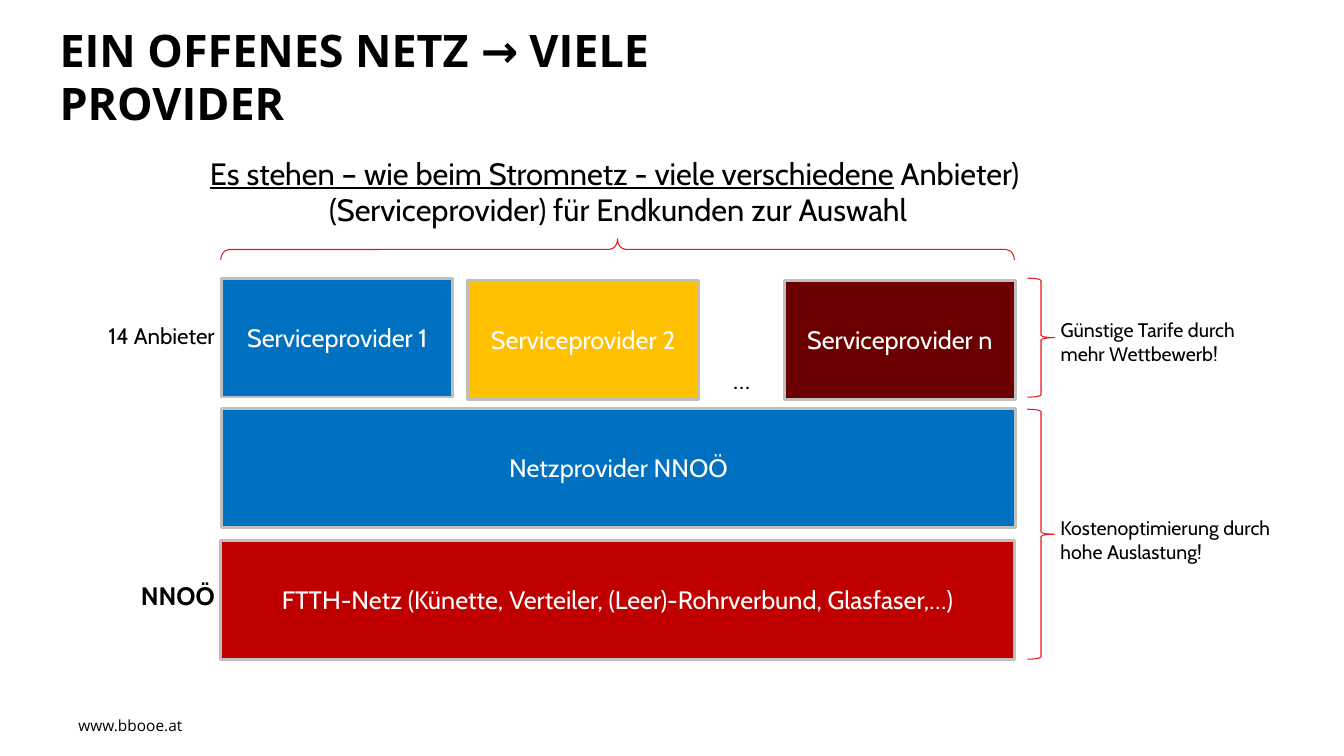
from pptx import Presentation
from pptx.dml.color import RGBColor
from pptx.enum.shapes import MSO_SHAPE as Kind
from pptx.enum.text import MSO_ANCHOR as Anchor, MSO_AUTO_SIZE as Fit, PP_ALIGN as Align
from pptx.util import Inches, Pt

BLACK = RGBColor(0x00, 0x00, 0x00)
WHITE = RGBColor(0xFF, 0xFF, 0xFF)
GREY = RGBColor(0xBF, 0xBF, 0xBF)
BLUE = RGBColor(0x00, 0x70, 0xC0)
GOLD = RGBColor(0xFF, 0xC0, 0x00)
RED = RGBColor(0xC0, 0x00, 0x00)
WINE = RGBColor(0x6C, 0x00, 0x00)
BRIGHT = RGBColor(0xE5, 0x1A, 0x1A)


class Sheet:
    body = "Cabin"
    head = "Open Sans"

    def __init__(self, deck):
        self.slide = deck.slides.add_slide(deck.slide_layouts[5])

    def place(self, shape, spot):
        shape.left, shape.top, shape.width, shape.height = map(Inches, spot)

    def letter(self, shape, text, size, color=BLACK, font=body, bold=False,
               align=Align.LEFT, anchor=Anchor.TOP, wrap=True, inset=None, lead=None):
        frame = shape.text_frame
        frame.text = text
        frame.auto_size = Fit.NONE
        frame.word_wrap = wrap
        frame.vertical_anchor = anchor
        if inset is not None:
            frame.margin_left = frame.margin_right = Inches(inset)
            frame.margin_top = frame.margin_bottom = Inches(inset)
        for para in frame.paragraphs:
            para.alignment = align
            if lead:
                para.line_spacing = Pt(lead)
            for run in para.runs:
                run.font.name = font
                run.font.size = Pt(size)
                run.font.bold = bold
                run.font.color.rgb = color
        return frame

    def title(self, spot, text):
        shape = self.slide.shapes.title
        self.place(shape, spot)
        self.letter(shape, text, 32, font=self.head, bold=True,
                    anchor=Anchor.MIDDLE, wrap=False, lead=38)

    def label(self, spot, text, size, **style):
        shape = self.slide.shapes.add_textbox(*map(Inches, spot))
        return self.letter(shape, text, size, **style)

    def shape(self, kind, spot, line, width):
        shape = self.slide.shapes.add_shape(kind, *map(Inches, spot))
        shape.shadow.inherit = False
        shape.line.color.rgb = line
        shape.line.width = Pt(width)
        return shape

    def block(self, spot, text, fill):
        shape = self.shape(Kind.RECTANGLE, spot, GREY, 2)
        shape.fill.solid()
        shape.fill.fore_color.rgb = fill
        self.letter(shape, text, 18, color=WHITE, align=Align.CENTER, anchor=Anchor.MIDDLE)

    def brace(self, kind, spot, turn=0):
        shape = self.shape(kind, spot, BRIGHT, 0.75)
        shape.fill.background()
        shape.rotation = turn
        return shape


def main():
    deck = Presentation()
    deck.slide_width, deck.slide_height = Inches(13.33), Inches(7.5)
    sheet = Sheet(deck)
    sheet.title((0.49, 0.36, 8.15, 0.8), "EIN OFFENES NETZ → VIELE PROVIDER")
    sheet.label((0.68, 6.74, 1.65, 0.62), "www.bbooe.at", 11,
                font=sheet.head, anchor=Anchor.MIDDLE, lead=34)

    full, part, tall = 7.87, 2.29, 1.18
    blocks = [
        (2.19, 5.36, full, "FTTH-Netz (Künette, Verteiler, (Leer)-Rohrverbund, Glasfaser,…)", RED),
        (2.2, 4.05, full, "Netzprovider NNOÖ", BLUE),
        (2.2, 2.76, part, "Serviceprovider 1", BLUE),
        (4.64, 2.78, part, "Serviceprovider 2", GOLD),
        (7.78, 2.78, part, "Serviceprovider n", WINE),
    ]
    for left, top, width, text, fill in blocks:
        sheet.block((left, top, width, tall), text, fill)

    sheet.label((1.36, 5.76, 0.77, 0.3), "NNOÖ", 18, bold=True,
                align=Align.RIGHT, wrap=False, inset=0)
    sheet.label((0.17, 3.2, 1.96, 0.69), "14 Anbieter", 16, align=Align.RIGHT, inset=0)
    sheet.label((7.23, 3.57, 0.25, 0.38), "…", 18, align=Align.RIGHT, wrap=False, inset=0.04)

    lead = "Es stehen – wie beim Stromnetz - viele verschiedene"
    frame = sheet.label((1.59, 1.49, 9.08, 0.82),
                        lead + "\n(Serviceprovider) für Endkunden zur Auswahl", 22,
                        align=Align.CENTER, wrap=False, inset=0.04)
    first = frame.paragraphs[0]
    first.runs[0].font.underline = True
    tail = first.add_run()
    tail.text = " Anbieter) "
    tail.font.name = sheet.body
    tail.font.size = Pt(22)
    tail.font.color.rgb = BLACK

    top = sheet.brace(Kind.LEFT_BRACE, (6.02, -1.46, 0.21, full), 90)
    top.adjustments[0] = 0.394
    gains = [
        (2.76, tall, 3.11, 2.21, "Günstige Tarife durch \vmehr Wettbewerb!"),
        (4.06, 2.48, 5.07, 2.54, "Kostenoptimierung durch\vhohe Auslastung!"),
    ]
    for start, height, note, width, text in gains:
        sheet.brace(Kind.RIGHT_BRACE, (10.19, start, 0.27, height))
        sheet.label((10.42, note, width, 0.57), text, 14, wrap=False)
    deck.save("out.pptx")


if __name__ == "__main__":
    main()
